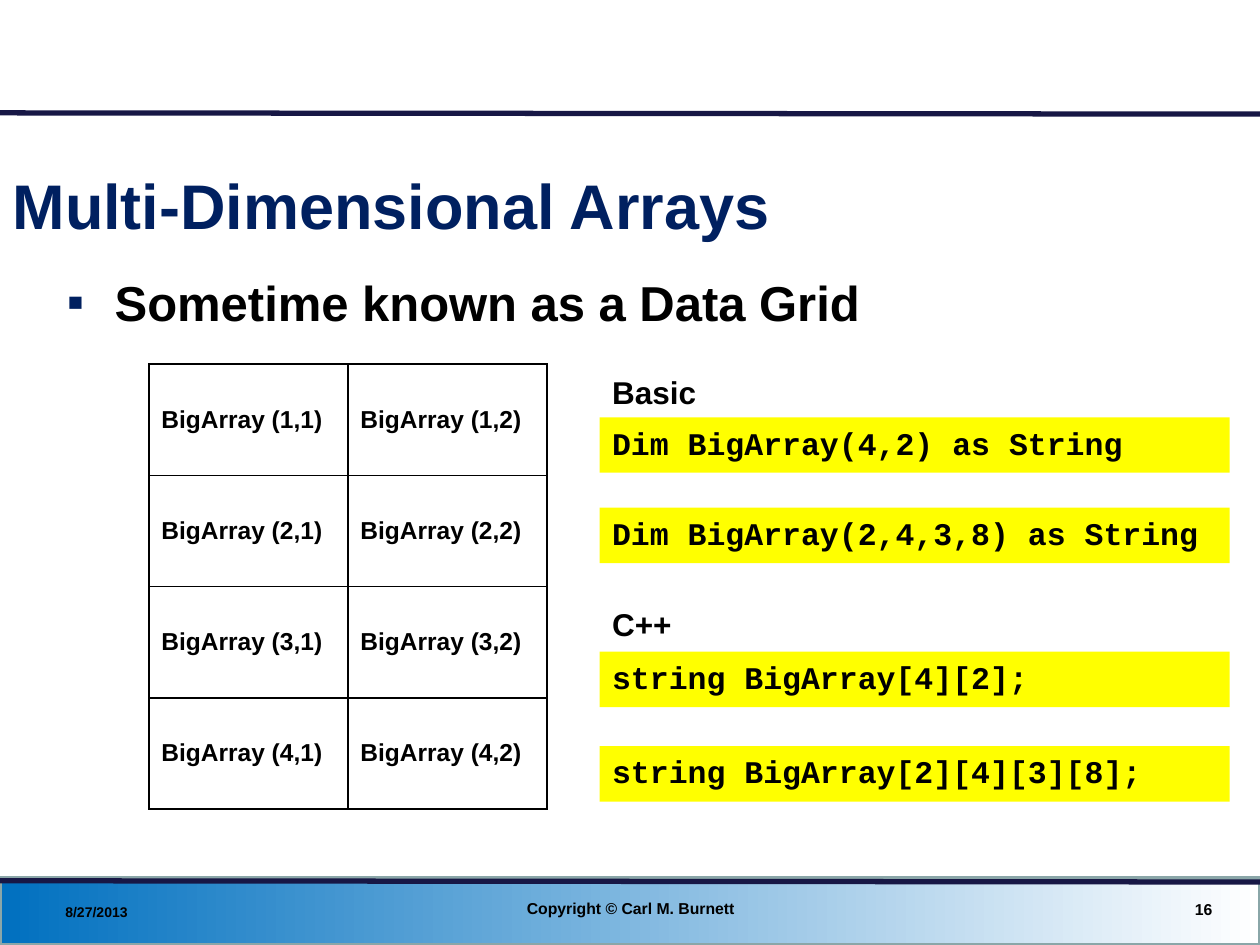
from lxml.etree import SubElement
from pptx import Presentation
from pptx.dml.color import RGBColor
from pptx.enum.shapes import MSO_CONNECTOR as Connector, MSO_SHAPE as Shape
from pptx.enum.text import MSO_ANCHOR as Anchor, MSO_AUTO_SIZE as AutoSize, PP_ALIGN as Align
from pptx.oxml.ns import qn
from pptx.util import Pt

NAVY, RULE, BLACK, YELLOW = "002060", "171745", "000000", "FFFF00"


def color(hex_string):
    return RGBColor.from_string(hex_string)


def write(frame, text, size, font="Arial", fill=BLACK, align=Align.LEFT,
          anchor=Anchor.TOP, wrap=True, bullet=None):
    frame.word_wrap = wrap
    frame.auto_size = AutoSize.NONE
    frame.vertical_anchor = anchor
    paragraph = frame.paragraphs[0]
    paragraph.alignment = align
    paragraph.space_before = Pt(0)
    if bullet:
        add_bullet(paragraph, bullet)
    run = paragraph.add_run()
    run.text = text
    run.font.name, run.font.size, run.font.bold = font, Pt(size), True
    run.font.color.rgb = color(fill)


def add_bullet(paragraph, character, indent=27.36):
    properties = paragraph._p.get_or_add_pPr()
    properties.set("marL", str(Pt(indent)))
    properties.set("indent", str(-Pt(indent)))
    bullet_color = SubElement(properties, qn("a:buClr"))
    SubElement(bullet_color, qn("a:srgbClr"), val=NAVY)
    SubElement(properties, qn("a:buFont"), typeface="Arial")
    SubElement(properties, qn("a:buChar"), char=character)


def place(shape, left, top, width, height):
    shape.left, shape.top = Pt(left), Pt(top)
    shape.width, shape.height = Pt(width), Pt(height)


def add_text(slide, text, left, top, width, height, **text_format):
    box = slide.shapes.add_textbox(Pt(left), Pt(top), Pt(width), Pt(height))
    write(box.text_frame, text, **text_format)


def add_rectangle(slide, left, top, width, height):
    shape = slide.shapes.add_shape(Shape.RECTANGLE, Pt(left), Pt(top), Pt(width), Pt(height))
    shape.shadow.inherit = False
    return shape


def add_rule(slide, top, width):
    """Draw a thick rule that falls slightly to the right."""
    line = slide.shapes.add_connector(Connector.STRAIGHT, Pt(0), Pt(top), Pt(width), Pt(top + 0.72))
    line.line.color.rgb = color(RULE)
    line.line.width = Pt(3)
    SubElement(line._element.spPr, qn("a:effectLst"))


def add_footer(slide, left, top, width, height):
    # Gradient band
    band = add_rectangle(slide, left, top, width, height)
    band.fill.gradient()
    band.fill.gradient_angle = 0
    for stop, position, shade in zip(band.fill.gradient_stops, (0, 1), ("0070C0", "FFFFFF")):
        stop.position = position
        stop.color.rgb = color(shade)
    band.line.color.rgb = color("8AA6A8")
    band.line.width = Pt(2)
    add_rule(slide, top + 1.5, width)

    # Date, copyright and slide number
    parts = [
        ("8/27/2013", 30.24, 9.4, 167.76, 19.44, 8, Align.LEFT),
        ("Copyright © Carl M. Burnett", 246.24, 6.5, 228.24, 20.88, 9, Align.CENTER),
        ("16", 532.08, 7.2, 167.76, 20.88, 9, Align.RIGHT),
    ]
    for text, x, y, box_width, box_height, size, align in parts:
        add_text(slide, text, left + x, top + y, box_width, box_height,
                 size=size, align=align, anchor=Anchor.MIDDLE)


def add_headings(slide, left, top, width):
    title, body = slide.shapes.title, slide.placeholders[1]
    place(title, left, top, width - 30, 70)
    write(title.text_frame, "Multi-Dimensional Arrays", 36, fill=NAVY, anchor=Anchor.MIDDLE)
    place(body, left + 31, top + 70, width - 31, 36)
    write(body.text_frame, "Sometime known as a Data Grid", 28, bullet="▪")


def add_cell_borders(cell):
    properties = cell._tc.get_or_add_tcPr()
    for index, side in enumerate(("lnL", "lnR", "lnT", "lnB")):
        border = properties.makeelement(qn(f"a:{side}"), {"w": str(Pt(1))})
        fill = SubElement(border, qn("a:solidFill"))
        SubElement(fill, qn("a:srgbClr"), val=BLACK)
        properties.insert(index, border)


def add_array_grid(slide, left, top, width, height, rows=4, columns=2):
    table = slide.shapes.add_table(rows, columns, Pt(left), Pt(top), Pt(width), Pt(height)).table
    table.first_row = table.horz_banding = False
    for row in range(rows):
        for column in range(columns):
            cell = table.cell(row, column)
            cell.fill.background()
            add_cell_borders(cell)
            write(cell.text_frame, f"BigArray ({row + 1},{column + 1})", 14)
            cell.vertical_anchor = Anchor.MIDDLE


def add_code_examples(slide, left, top, width, label, examples):
    """Place a language label above bars given as (offset from top, code)."""
    add_text(slide, label, left, top, 64, 29, size=18, wrap=False)
    for offset, code in examples:
        bar = add_rectangle(slide, left, top + offset, width, 31.7)
        bar.fill.solid()
        bar.fill.fore_color.rgb = color(YELLOW)
        bar.line.fill.background()
        write(bar.text_frame, code, 18, font="Courier New")


def main():
    presentation = Presentation()
    presentation.slide_width, presentation.slide_height = Pt(720), Pt(540)
    slide = presentation.slides.add_slide(presentation.slide_layouts[1])

    add_footer(slide, 0, 501.8, 720, 38.2)
    add_rule(slide, 64.5, 720)
    add_headings(slide, 0, 82, 720)
    add_array_grid(slide, 85, 208, 227.5, 254.4)
    add_code_examples(slide, 342.7, 209.5, 360, "Basic", [
        (29, "Dim BigArray(4,2) as String"),
        (80.6, "Dim BigArray(2,4,3,8) as String"),
    ])
    add_code_examples(slide, 342.7, 342, 360, "C++", [
        (30.4, "string BigArray[4][2];"),
        (84.4, "string BigArray[2][4][3][8];"),
    ])
    presentation.save("out.pptx")


if __name__ == "__main__":
    main()
